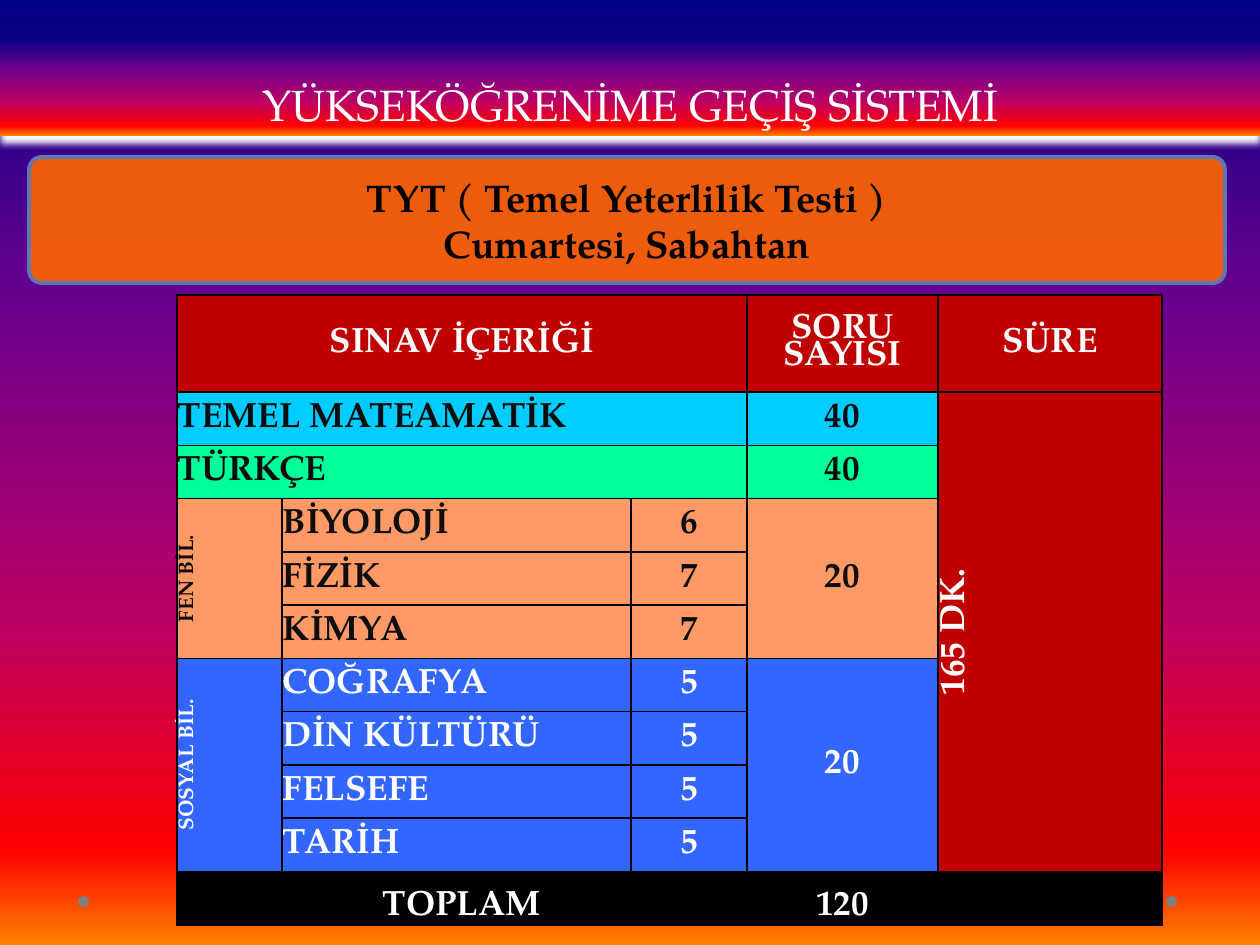
"""Build the exam content slide."""
import dataclasses

import lxml.etree
import pptx
import pptx.dml.color
import pptx.enum.shapes
import pptx.enum.text
import pptx.oxml.ns
import pptx.util

SHAPE = pptx.enum.shapes.MSO_SHAPE
ALIGN = pptx.enum.text.PP_ALIGN
ANCHOR = pptx.enum.text.MSO_ANCHOR
PX = 914400 / 126


@dataclasses.dataclass(frozen=True)
class Theme:
    """Colours, font and type sizes of the slide."""
    font: str = "TeX Gyre Pagella"
    title_size: int = 25
    banner_size: int = 22
    cell_size: int = 20
    side_size: int = 12
    white: str = "FFFFFF"
    black: str = "000000"
    ink: str = "0D0D0D"
    red: str = "C00000"
    cyan: str = "00CCFF"
    green: str = "00FF99"
    salmon: str = "FF9966"
    blue: str = "3366FF"
    orange: str = "FF6600"
    outline: str = "6076B4"
    dot: str = "808080"
    sunset: tuple = ((0, "000082"), (30, "66008F"), (65, "BA0066"),
                     (90, "FF0000"), (100, "FF8200"))


THEME = Theme()
COLUMNS = (105, 349, 116, 191, 224)
HEADER_HEIGHT = 97
BODY_HEIGHT = 533
BODY_ROWS = 10
SINGLES = (("TEMEL MATEAMATİK", "40", THEME.cyan),
           ("TÜRKÇE", "40", THEME.green))
GROUPS = (
    ("FEN BİL.", "20", THEME.salmon, THEME.ink,
     (("BİYOLOJİ", "6"), ("FİZİK", "7"), ("KİMYA", "7"))),
    ("SOSYAL BİL.", "20", THEME.blue, THEME.white,
     (("COĞRAFYA", "5"), ("DİN KÜLTÜRÜ", "5"), ("FELSEFE", "5"), ("TARİH", "5"))),
)


def emu(px):
    """Turn px into EMU."""
    return pptx.util.Emu(round(px * PX))


def rgb(value):
    """Make a colour from its hex digits."""
    return pptx.dml.color.RGBColor.from_string(value)


def add_xml(parent, tag, **attributes):
    """Append a drawing element to a parent."""
    return lxml.etree.SubElement(parent, pptx.oxml.ns.qn(tag), attributes)


def paint_sunset(fill, owner):
    """Give a fill the vertical gradient of the theme."""
    fill.gradient()
    fill.gradient_angle = 270
    stops = next(owner.iter(pptx.oxml.ns.qn("a:gsLst")))
    for stop in list(stops):
        stops.remove(stop)
    for position, color in THEME.sunset:
        stop = add_xml(stops, "a:gs", pos=str(position * 1000))
        add_xml(stop, "a:srgbClr", val=color)


def write(frame, lines, size, color, bold=True, align=ALIGN.CENTER, spacing=None):
    """Write lines of text in one style."""
    frame.word_wrap = True
    for index, line in enumerate(lines):
        para = frame.add_paragraph() if index else frame.paragraphs[0]
        para.text = line
        para.alignment = align
        para.line_spacing = spacing
        para.font.name = THEME.font
        para.font.size = pptx.util.Pt(size)
        para.font.bold = bold
        para.font.color.rgb = rgb(color)


def add_box(page, kind, left, top, width, height, color=None):
    """Add a preset shape without line or shadow."""
    box = page.shapes.add_shape(kind, *map(emu, (left, top, width, height)))
    box.shadow.inherit = False
    box.line.fill.background()
    if color:
        box.fill.solid()
        box.fill.fore_color.rgb = rgb(color)
    return box


def add_title(page, text):
    """Add the gradient title bar with its white glow below."""
    bar = add_box(page, SHAPE.RECTANGLE, 0, 36, 1260, 100)
    paint_sunset(bar.fill, bar.element)
    effects = bar.element.spPr.find(pptx.oxml.ns.qn("a:effectLst"))
    shadow = add_xml(effects, "a:outerShdw", blurRad="50800", dist="50800",
                     dir="5400000", algn="t", rotWithShape="0")
    add_xml(shadow, "a:srgbClr", val=THEME.white)
    bar.text_frame.vertical_anchor = ANCHOR.BOTTOM
    write(bar.text_frame, [text], THEME.title_size, THEME.white,
          bold=False, spacing=pptx.util.Pt(58))


def add_banner(page, lines):
    """Add the rounded banner that names the test."""
    banner = add_box(page, SHAPE.ROUNDED_RECTANGLE, 29, 157, 1196, 126, THEME.orange)
    banner.adjustments[0] = 0.1
    color = next(banner.element.spPr.iter(pptx.oxml.ns.qn("a:srgbClr")))
    add_xml(color, "a:alpha", val="90000")
    banner.line.color.rgb = rgb(THEME.outline)
    banner.line.width = pptx.util.Pt(2.25)
    banner.text_frame.vertical_anchor = ANCHOR.MIDDLE
    write(banner.text_frame, lines, THEME.banner_size, THEME.black)


def add_grid(page):
    """Add the empty table with black cell borders."""
    rows = BODY_ROWS + 1
    frame = page.shapes.add_table(rows, len(COLUMNS), emu(177), emu(295),
                                  emu(sum(COLUMNS)), emu(HEADER_HEIGHT + BODY_HEIGHT))
    table = frame.table
    table.first_row = table.horz_banding = False
    for column, width in zip(table.columns, COLUMNS):
        column.width = emu(width)
    for index, row in enumerate(table.rows):
        row.height = emu(BODY_HEIGHT / BODY_ROWS if index else HEADER_HEIGHT)
    for cell in table.iter_cells():
        properties = cell._tc.get_or_add_tcPr()
        for side in ("a:lnL", "a:lnR", "a:lnT", "a:lnB"):
            line = add_xml(properties, side, w="12700")
            add_xml(add_xml(line, "a:solidFill"), "a:srgbClr", val=THEME.black)
    return table


def fill_cell(table, row, column, text, fill, color, rows=1, columns=1,
              size=THEME.cell_size, align=ALIGN.CENTER, anchor=ANCHOR.MIDDLE,
              upright=False, spacing=None):
    """Merge, colour and write one table cell."""
    for r in range(row, row + rows):
        for c in range(column, column + columns):
            part = table.cell(r, c)
            part.fill.solid()
            part.fill.fore_color.rgb = rgb(fill)
    cell = table.cell(row, column)
    if rows * columns > 1:
        cell.merge(table.cell(row + rows - 1, column + columns - 1))
    cell.margin_left = cell.margin_right = cell.margin_top = emu(1)
    cell.margin_bottom = 0
    cell.vertical_anchor = anchor
    if upright:
        cell._tc.get_or_add_tcPr().set("vert", "vert270")
    write(cell.text_frame, [text], size, color, align=align, spacing=spacing)


def add_exam_table(page):
    """Add the table of subjects, question counts and time."""
    table = add_grid(page)
    for column, text, columns in ((0, "SINAV İÇERİĞİ", 3), (3, "SORU SAYISI", 1), (4, "SÜRE", 1)):
        fill_cell(table, 0, column, text, THEME.red, THEME.white, columns=columns, spacing=0.8)
    for row, (subject, count, fill) in enumerate(SINGLES, 1):
        fill_cell(table, row, 0, subject, fill, THEME.ink, columns=3, align=ALIGN.LEFT)
        fill_cell(table, row, 3, count, fill, THEME.ink)
    fill_cell(table, 1, 4, "165 DK.", THEME.red, THEME.white, rows=BODY_ROWS - 1, upright=True)
    row = len(SINGLES) + 1
    for name, total, fill, color, subjects in GROUPS:
        span = len(subjects)
        fill_cell(table, row, 0, name, fill, color, rows=span,
                  size=THEME.side_size, upright=True)
        fill_cell(table, row, 3, total, fill, color, rows=span)
        for subject, count in subjects:
            fill_cell(table, row, 1, subject, fill, color, align=ALIGN.LEFT)
            fill_cell(table, row, 2, count, fill, color)
            row += 1
    for column, text, columns in ((0, "TOPLAM", 3), (3, "120", 1), (4, "", 1)):
        fill_cell(table, row, column, text, THEME.black, THEME.white,
                  columns=columns, anchor=ANCHOR.BOTTOM)


def main():
    """Build and save the deck."""
    deck = pptx.Presentation()
    deck.slide_width, deck.slide_height = emu(1260), emu(945)
    page = deck.slides.add_slide(deck.slide_layouts[6])
    paint_sunset(page.background.fill, page.element)
    for left in (1166, 78):
        add_box(page, SHAPE.OVAL, left, 896, 11, 11, THEME.dot)
    add_title(page, "YÜKSEKÖĞRENİME GEÇİŞ SİSTEMİ")
    add_exam_table(page)
    add_banner(page, ["TYT ( Temel Yeterlilik Testi )", "Cumartesi, Sabahtan"])
    deck.save("out.pptx")


if __name__ == "__main__":
    main()
